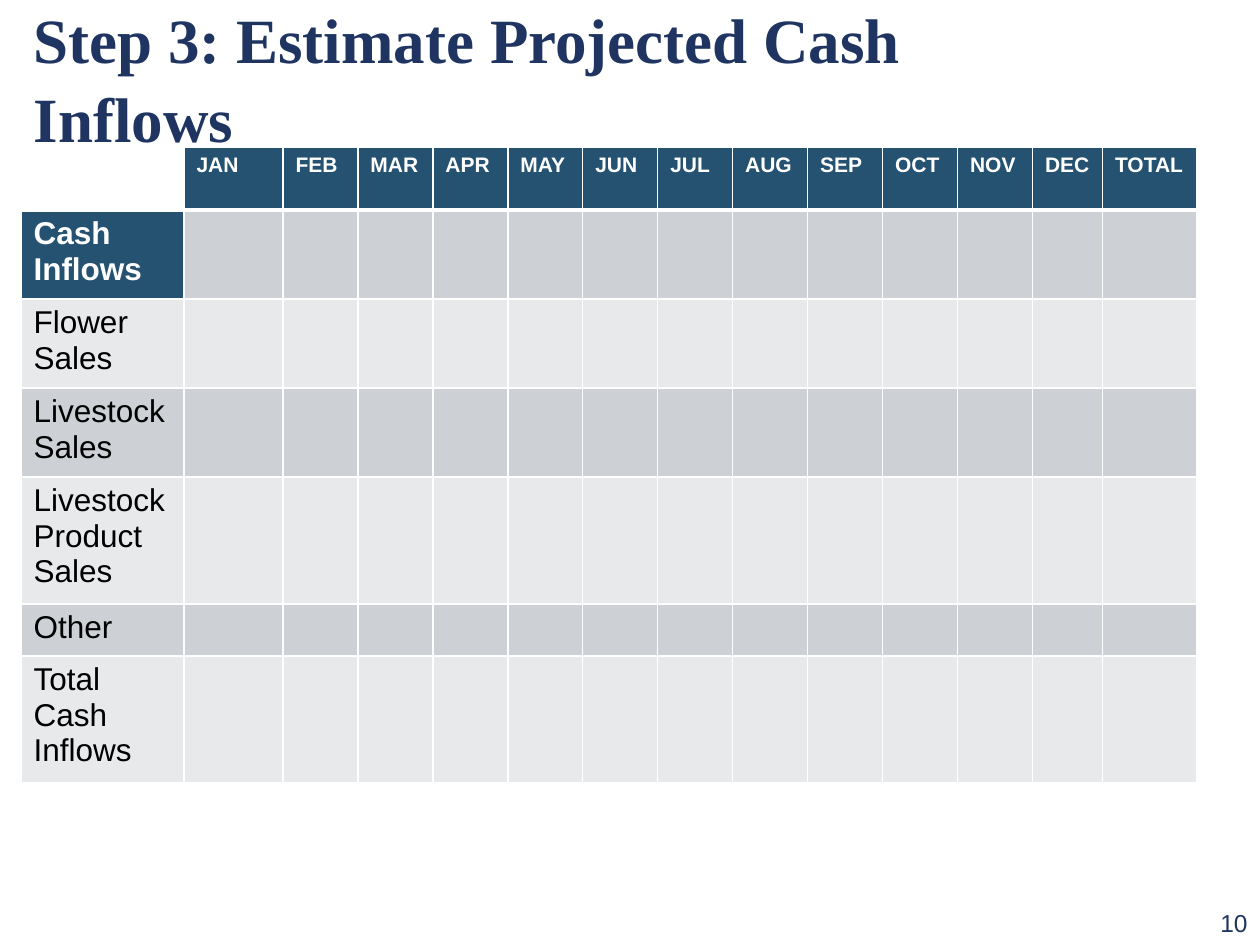
from dataclasses import dataclass

from lxml.etree import SubElement
from pptx import Presentation
from pptx.dml.color import RGBColor
from pptx.enum.text import MSO_ANCHOR, MSO_AUTO_SIZE, PP_ALIGN
from pptx.oxml.ns import qn
from pptx.util import Emu, Pt

EMU_PER_PX = 914400 / 126

MONTHS = "JAN FEB MAR APR MAY JUN JUL AUG SEP OCT NOV DEC".split()
HEADINGS = ["", *MONTHS, "TOTAL"]
INFLOWS = ["Cash Inflows", "Flower Sales", "Livestock Sales",
           "Livestock Product Sales", "Other", "Total Cash Inflows"]
COLUMN_WIDTHS = [163, 99] + [75] * 10 + [70, 94]
ROW_HEIGHTS = [63, 89, 89, 89, 127, 52, 127]


@dataclass(frozen=True)
class Theme:
    navy: str = "1F3461"
    teal: str = "265272"
    white: str = "FFFFFF"
    black: str = "000000"
    bands: tuple = ("CDD1D5", "E8E9EB")
    title_font: str = "Times New Roman"
    body_font: str = "Arial"
    title_size: int = 36
    label_size: int = 18
    number_size: int = 14
    month_size: int = 12
    rule: int = 1
    header_rule: int = 3


THEME = Theme()


def px(length):
    return Emu(round(length * EMU_PER_PX))


def set_attributes(target, values):
    for name, value in values.items():
        setattr(target, name, value)


def place(shape, left, top, width, height):
    set_attributes(shape, {"left": px(left), "top": px(top),
                           "width": px(width), "height": px(height)})


def write(frame, text, font, size, color, bold=False, **paragraph_format):
    paragraph = frame.paragraphs[0]
    set_attributes(paragraph, paragraph_format)
    run = paragraph.add_run()
    run.text = text
    set_attributes(run.font, {"name": font, "size": Pt(size), "bold": bold})
    run.font.color.rgb = RGBColor.from_string(color)


def fill_cell(cell, color):
    cell.fill.solid()
    cell.fill.fore_color.rgb = RGBColor.from_string(color)


def set_borders(cell, **widths):
    """Put white rules on the cell; they must come before its fill."""
    properties = cell._tc.get_or_add_tcPr()
    for side in ("lnL", "lnR", "lnT", "lnB"):
        width = widths.get(side, THEME.rule)
        line = SubElement(properties, qn(f"a:{side}"), w=str(Pt(width)))
        color = SubElement(line, qn("a:solidFill"))
        SubElement(color, qn("a:srgbClr"), val=THEME.white)


def add_title(slide, text):
    title = slide.shapes.title
    place(title, 21, 21, 1103, 110)
    set_attributes(title.text_frame, {
        "word_wrap": True,
        "auto_size": MSO_AUTO_SIZE.NONE,
        "vertical_anchor": MSO_ANCHOR.MIDDLE,
    })
    write(title.text_frame, text, THEME.title_font, THEME.title_size,
          THEME.navy, bold=True, alignment=PP_ALIGN.LEFT, line_spacing=1.05)


def add_cash_table(slide):
    frame = slide.shapes.add_table(
        len(ROW_HEIGHTS), len(COLUMN_WIDTHS), px(21), px(147),
        px(sum(COLUMN_WIDTHS)), px(sum(ROW_HEIGHTS)))
    table = frame.table
    set_attributes(table, {"first_row": False, "horz_banding": False})
    for column, width in zip(table.columns, COLUMN_WIDTHS):
        column.width = px(width)
    for row, height in zip(table.rows, ROW_HEIGHTS):
        row.height = px(height)

    # Header row
    for index, heading in enumerate(HEADINGS):
        cell = table.cell(0, index)
        set_borders(cell, lnB=THEME.header_rule)
        fill_cell(cell, THEME.teal if heading else THEME.white)
        if heading:
            write(cell.text_frame, heading, THEME.body_font,
                  THEME.month_size, THEME.white, bold=True)

    # Inflow rows, in alternating bands
    for number, inflow in enumerate(INFLOWS):
        is_section = number == 0
        for index in range(len(HEADINGS)):
            cell = table.cell(number + 1, index)
            top_rule = THEME.header_rule if is_section else THEME.rule
            set_borders(cell, lnT=top_rule)
            is_section_label = is_section and index == 0
            fill_cell(cell, THEME.teal if is_section_label
                      else THEME.bands[number % 2])
        write(table.cell(number + 1, 0).text_frame, inflow, THEME.body_font,
              THEME.label_size, THEME.white if is_section else THEME.black,
              bold=is_section)


def add_page_number(slide, number):
    page_number = slide.shapes.add_textbox(px(1187), px(902), px(73), px(43))
    page_number.text_frame.word_wrap = True
    write(page_number.text_frame, number, THEME.body_font, THEME.number_size,
          THEME.navy, alignment=PP_ALIGN.RIGHT)


def main():
    presentation = Presentation()
    set_attributes(presentation, {"slide_width": px(1260),
                                  "slide_height": px(945)})
    slide = presentation.slides.add_slide(presentation.slide_layouts[5])
    add_page_number(slide, "10")
    add_title(slide, "Step 3: Estimate Projected Cash Inflows")
    add_cash_table(slide)
    presentation.save("out.pptx")


if __name__ == "__main__":
    main()
